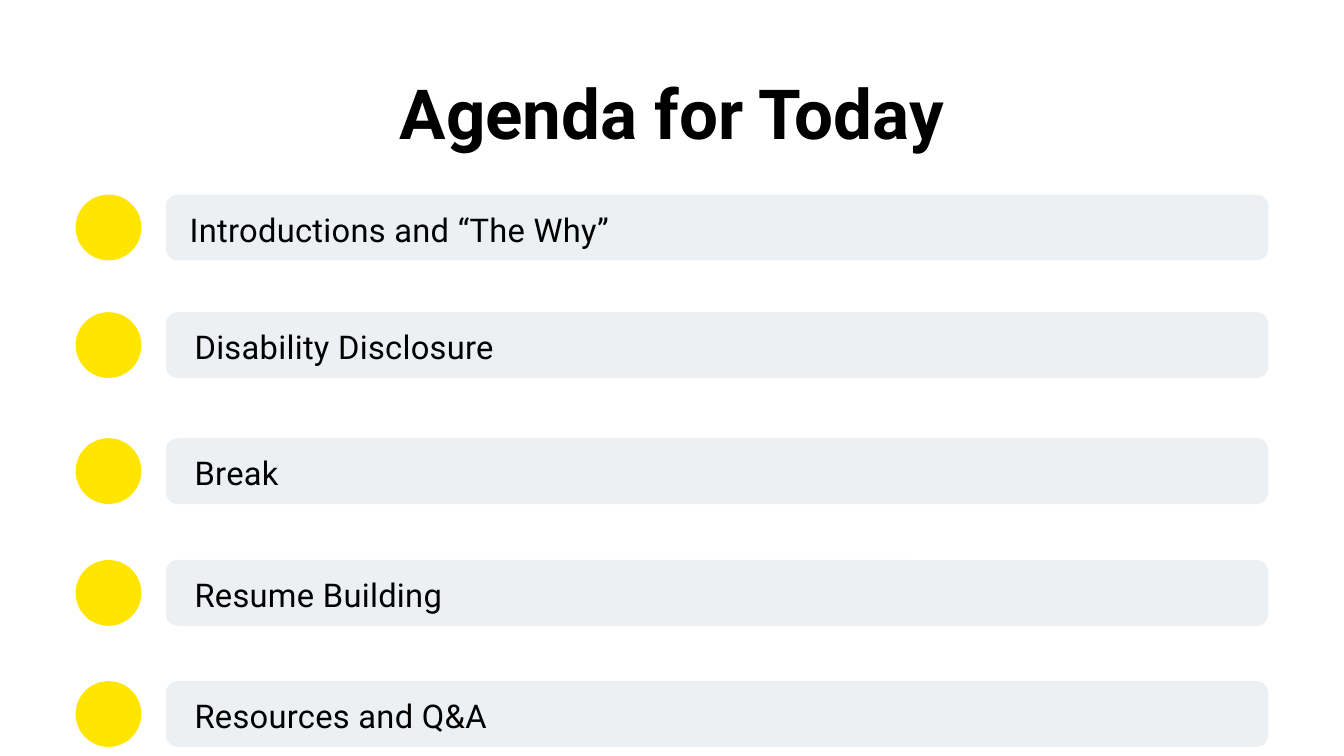
from pptx import Presentation
from pptx.dml.color import RGBColor
from pptx.enum.shapes import MSO_SHAPE as Preset
from pptx.enum.text import MSO_ANCHOR as Anchor, MSO_AUTO_SIZE as AutoSize, PP_ALIGN as Align
from pptx.util import Emu, Pt

EMU_PER_PX = 9525
FONT = "Roboto"
BLACK, YELLOW, GREY = "000000", "FFE500", "EDF0F2"

MARGIN = 108
CONTENT_WIDTH = 1704
ROW_HEIGHT = 94
BAR_LEFT = 237
BAR_WIDTH = MARGIN + CONTENT_WIDTH - BAR_LEFT
TEXT_RIGHT = 1761

# Top of the row, left of its text, drop of the text within the row, wording
AGENDA = [
    (278, 271, 13, "Introductions and “The Why”"),
    (446, 278, 12, "Disability Disclosure"),
    (626, 278, 12, "Break"),
    (800, 278, 12, "Resume Building"),
    (973, 278, 12, "Resources and Q&A"),
]


def px(value):
    return Emu(value * EMU_PER_PX)


def color(hex_value):
    return RGBColor.from_string(hex_value)


def place(shape, left, top, width, height):
    shape.left, shape.top = px(left), px(top)
    shape.width, shape.height = px(width), px(height)


def write_text(shape, text, size, line_height, align=Align.LEFT, bold=False, tracking=0):
    """Fill a shape with one line of text; tracking is in hundredths of a point."""
    frame = shape.text_frame
    frame.text = text
    frame.word_wrap = True
    frame.auto_size = AutoSize.NONE
    frame.vertical_anchor = Anchor.TOP
    frame.margin_left = frame.margin_top = frame.margin_right = frame.margin_bottom = 0
    paragraph = frame.paragraphs[0]
    paragraph.alignment = align
    paragraph.line_spacing = Pt(line_height)
    paragraph.space_before = Pt(0)
    run = paragraph.runs[0]
    run.font.name = FONT
    run.font.size = Pt(size)
    run.font.bold = bold
    run.font.color.rgb = color(BLACK)
    if tracking:
        run.font._element.set("spc", str(tracking))


def add_filled_shape(slide, preset, left, top, width, height, fill):
    shape = slide.shapes.add_shape(preset, px(left), px(top), px(width), px(height))
    shape.shadow.inherit = False
    shape.fill.solid()
    shape.fill.fore_color.rgb = color(fill)
    shape.line.fill.background()
    return shape


def add_title(slide, text):
    title = slide.shapes.title
    place(title, MARGIN, 111, CONTENT_WIDTH, 110)
    write_text(title, text, 74, 81.4, align=Align.CENTER, bold=True)


def add_agenda_row(slide, top, text_left, text_drop, text):
    add_filled_shape(slide, Preset.OVAL, MARGIN, top, ROW_HEIGHT, ROW_HEIGHT, YELLOW)
    bar = add_filled_shape(
        slide, Preset.ROUNDED_RECTANGLE, BAR_LEFT, top, BAR_WIDTH, ROW_HEIGHT, GREY
    )
    bar.adjustments[0] = 0.18
    label = slide.shapes.add_textbox(
        px(text_left), px(top + text_drop), px(TEXT_RIGHT - text_left), px(63)
    )
    write_text(label, text, 35, 49, tracking=30)


def main():
    presentation = Presentation()
    presentation.slide_width, presentation.slide_height = px(1920), px(1080)
    title_only = presentation.slide_layouts[5]
    slide = presentation.slides.add_slide(title_only)
    add_title(slide, "Agenda for Today")
    for row in AGENDA:
        add_agenda_row(slide, *row)
    presentation.save("out.pptx")


if __name__ == "__main__":
    main()
